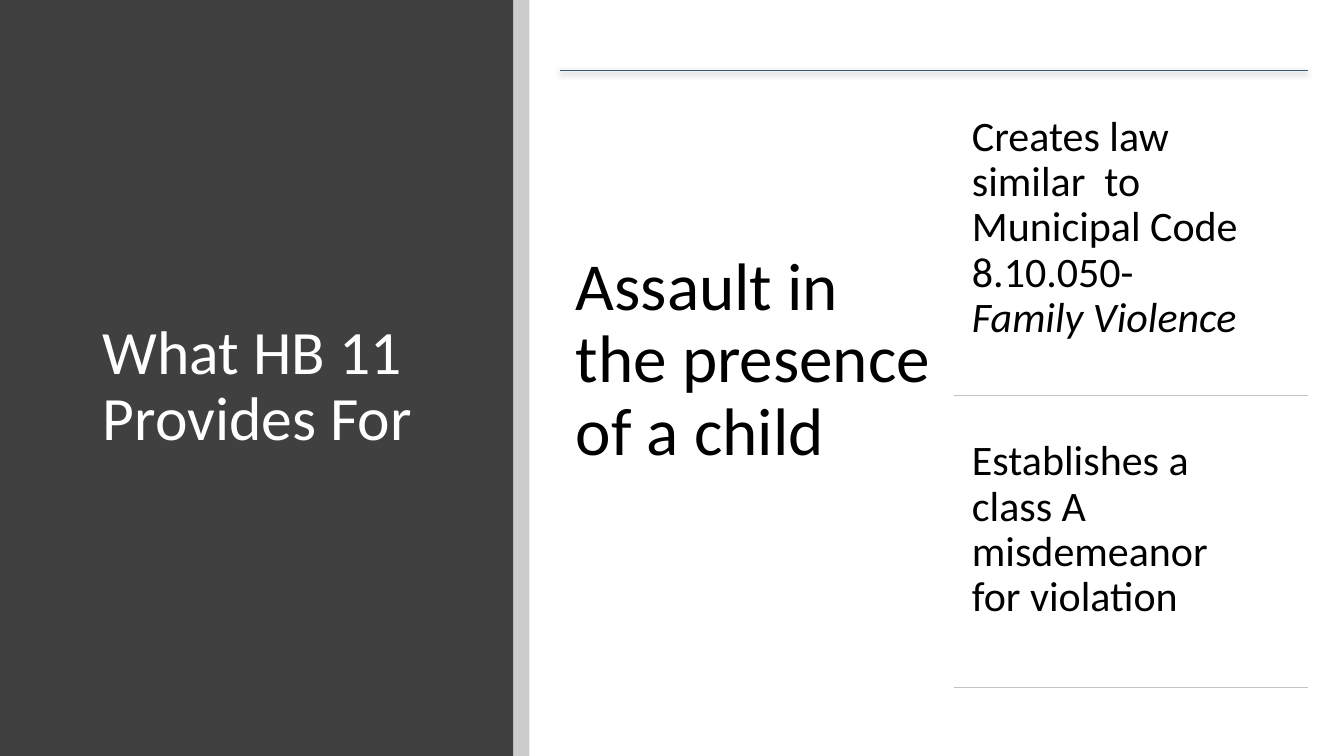
from lxml.etree import SubElement
from pptx import Presentation
from pptx.dml.color import RGBColor
from pptx.enum.shapes import MSO_CONNECTOR as LINE, MSO_SHAPE as SHAPE
from pptx.enum.text import MSO_ANCHOR as ANCHOR, MSO_AUTO_SIZE as FIT, PP_ALIGN as ALIGN
from pptx.oxml.ns import qn
from pptx.util import Inches, Pt


def tint(fmt, hue):
    """Set a solid colour on a fill."""
    fmt.solid()
    fmt.fore_color.rgb = RGBColor.from_string(hue)


def write(shape, runs, size, hue):
    """Fill a text shape with one left-aligned paragraph of (words, italic) runs."""
    frame = shape.text_frame
    frame.word_wrap = True
    frame.auto_size = FIT.NONE
    para = frame.paragraphs[0]
    para.alignment = ALIGN.LEFT
    para.line_spacing = 0.9
    for words, slant in runs:
        run = para.add_run()
        run.text = words
        run.font.name = "Calibri"
        run.font.size = Pt(size)
        run.font.italic = slant
        tint(run.font.fill, hue)
    return frame


deck = Presentation()
deck.slide_width, deck.slide_height = Inches(13.33), Inches(7.5)
slide = deck.slides.add_slide(deck.slide_layouts[5])
shapes = slide.shapes

# Title on the dark panel
title = shapes.title
title.left, title.top = Inches(0.92), Inches(0.89)
title.width, title.height = Inches(3.65), Inches(5.91)
write(title, [("What HB 11 Provides For", None)], 44, "FFFFFF").vertical_anchor = ANCHOR.MIDDLE

# Panel and its translucent edge, behind the title
for left, width, hue, alpha in [(0, 5.09, "404040", 100), (5.09, 0.16, "000000", 20)]:
    band = shapes.add_shape(SHAPE.RECTANGLE, Inches(left), 0, Inches(width), Inches(7.5))
    band.shadow.inherit = False
    band.line.fill.background()
    tint(band.fill, hue)
    tone = band.fill._xPr.find(qn("a:solidFill"))[0]
    SubElement(tone, qn("a:alpha"), val=str(alpha * 1000))
    title.element.addprevious(band.element)

# Rules: only the top one casts a shadow
for left, top, hue, cast in [
    (5.55, 0.7, "335B74", True),
    (9.46, 3.92, "BFC4C9", False),
    (9.46, 6.82, "BFC4C9", False),
]:
    rule = shapes.add_connector(LINE.STRAIGHT, Inches(left), Inches(top), Inches(12.97), Inches(top))
    rule.line.width = Pt(0.5)
    tint(rule.line.fill, hue)
    glow = SubElement(rule.element.spPr, qn("a:effectLst"))
    if cast:
        shade = SubElement(glow, qn("a:outerShdw"), blurRad=str(Pt(4.5)), dist=str(Pt(1.5)),
                           dir="5400000", algn="ctr", rotWithShape="0")
        tone = SubElement(shade, qn("a:srgbClr"), val="000000")
        SubElement(tone, qn("a:alpha"), val="63000")

# Offence on the left, its details on the right
law = [("Creates law similar  to Municipal Code 8.10.050- ", None), ("Family Violence", True)]
for left, top, width, height, pad, drop, size, runs in [
    (5.55, 0.7, 3.91, 6.44, 0.16, 1.64, 48, [("Assault in the presence of a child", None)]),
    (9.52, 1.02, 3.01, 2.91, 0.12, 0, 30, law),
    (9.52, 4.24, 2.97, 2.59, 0.12, 0, 30, [("Establishes a class A misdemeanor for violation", None)]),
]:
    box = shapes.add_textbox(Inches(left), Inches(top), Inches(width), Inches(height))
    frame = write(box, runs, size, "000000")
    frame.margin_left = frame.margin_right = frame.margin_bottom = Inches(pad)
    frame.margin_top = Inches(pad + drop)

deck.save("out.pptx")
